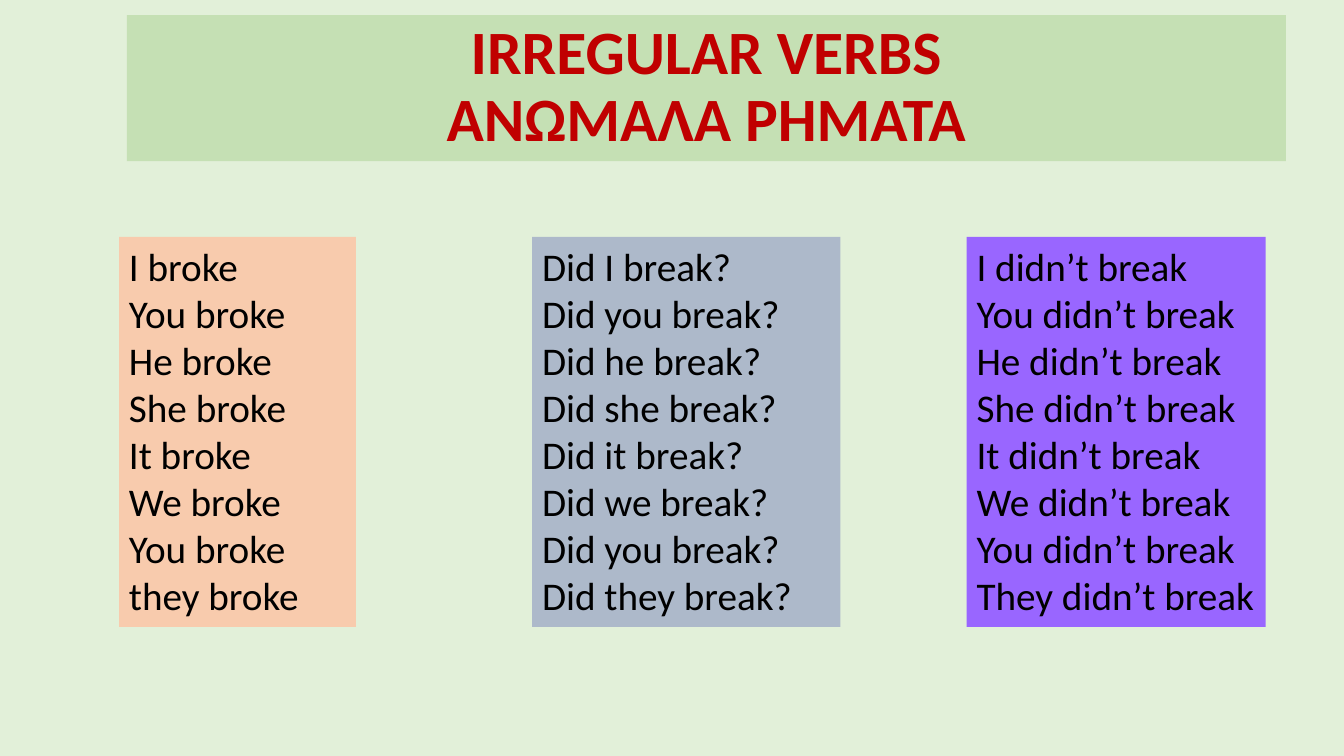
from pptx import Presentation
from pptx.dml.color import RGBColor
from pptx.enum.text import MSO_ANCHOR as Anchor, PP_ALIGN as Align
from pptx.util import Cm, Pt

PAST = ["I broke", "You broke", "He broke", "She broke",
        "It broke", "We broke", "You broke", "they broke"]
PRONOUNS = ["I", "you", "he", "she", "it", "we", "you", "they"]
QUESTIONS = [f"Did {pronoun} break?" for pronoun in PRONOUNS]
NEGATIVES = [f"{pronoun.capitalize()} didn’t break" for pronoun in PRONOUNS]


def paint(color_format, color):
    color_format.rgb = RGBColor.from_string(color)


def fill_solid(fill, color):
    fill.solid()
    paint(fill.fore_color, color)


def write(paragraph, text, size=28, color="000000", bold=False,
          align=Align.LEFT, spacing=1.0):
    paragraph.text = text
    paragraph.alignment = align
    paragraph.line_spacing = spacing
    paragraph.font.name = "Calibri"
    paragraph.font.size = Pt(size)
    paragraph.font.bold = bold
    paint(paragraph.font.color, color)


def add_panel(slide, lines, left, top, width, height, background,
              anchor=Anchor.TOP, **text_format):
    panel = slide.shapes.add_textbox(Cm(left), Cm(top), Cm(width), Cm(height))
    fill_solid(panel.fill, background)
    frame = panel.text_frame
    frame.word_wrap = True
    frame.vertical_anchor = anchor
    for index, line in enumerate(lines):
        paragraph = frame.add_paragraph() if index else frame.paragraphs[0]
        write(paragraph, line, **text_format)


def main():
    deck = Presentation()
    deck.slide_width, deck.slide_height = Cm(33.87), Cm(19.05)
    slide = deck.slides.add_slide(deck.slide_layouts[6])
    fill_solid(slide.background.fill, "E2F0D9")

    add_panel(slide, ["IRREGULAR VERBS\vAΝΩΜΑΛΑ ΡΗΜΑΤΑ"],
              3.2, 0.38, 29.21, 3.68, "C5E0B4", anchor=Anchor.MIDDLE,
              size=44, color="C00000", bold=True, align=Align.CENTER,
              spacing=0.9)

    verb_forms = [
        (PAST, 3.0, 5.97, "F8CBAD"),
        (QUESTIONS, 13.41, 7.77, "ADB9CA"),
        (NEGATIVES, 24.36, 7.54, "9966FF"),
    ]
    for forms, left, width, background in verb_forms:
        add_panel(slide, forms, left, 5.97, width, 9.83, background)

    deck.save("out.pptx")


if __name__ == "__main__":
    main()
